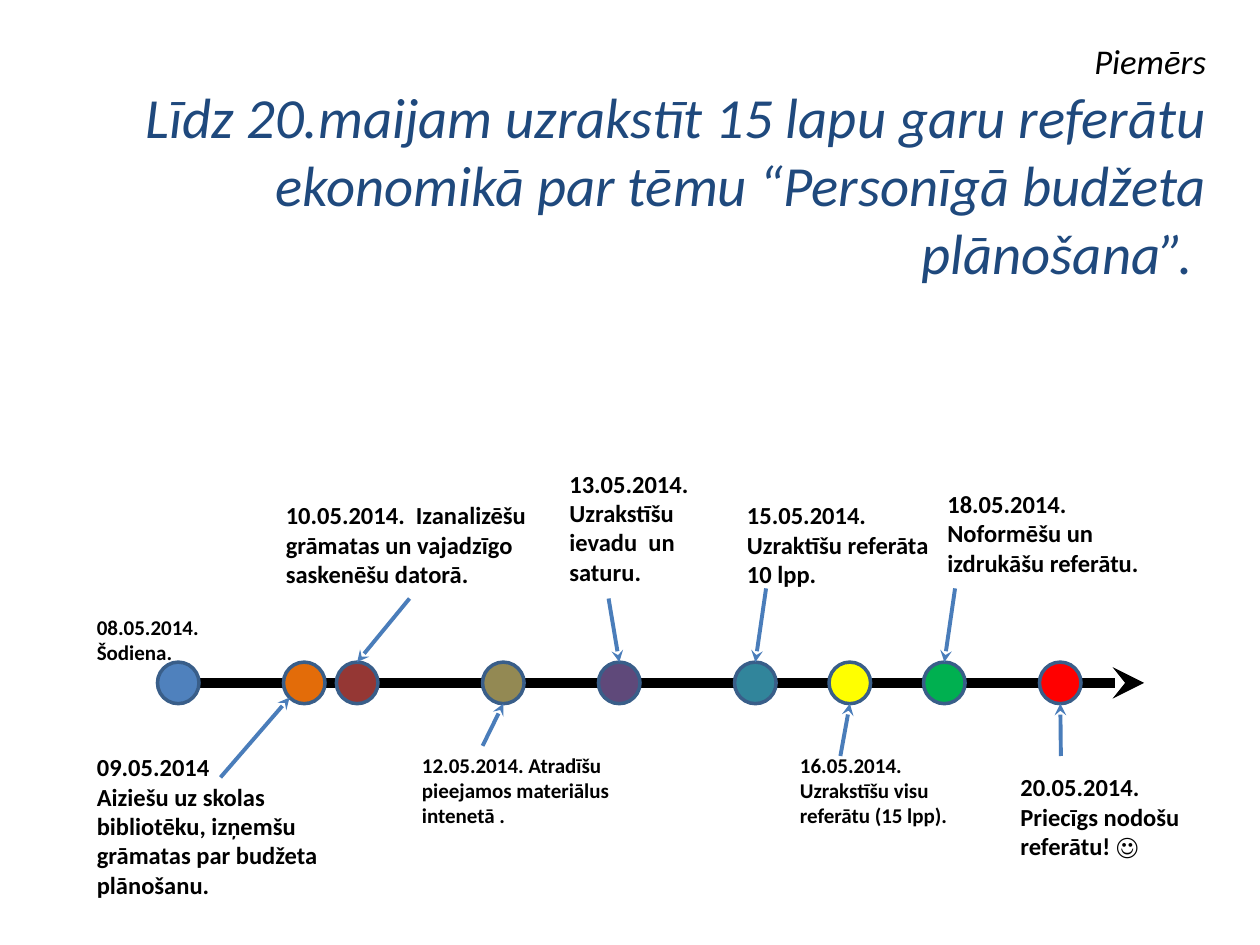
from math import cos, radians, sin

from lxml.etree import SubElement
from pptx import Presentation
from pptx.dml.color import RGBColor
from pptx.enum.shapes import MSO_CONNECTOR, MSO_SHAPE
from pptx.enum.text import MSO_ANCHOR, PP_ALIGN
from pptx.oxml.ns import qn
from pptx.util import Inches, Pt

COLORS = {
    "text": "000000", "title": "1F497D", "axis": "000000",
    "outline": "395E89", "arrow": "4A7DBA",
    "blue": "4F81BD", "orange": "E36C09", "brown": "953734",
    "olive": "938953", "purple": "5F497A", "teal": "31859B",
    "yellow": "FFFF00", "green": "00B050", "red": "FF0000",
}
FONT = "Calibri"
DIAMETER = 0.33
AXIS_Y = 5.42
AXIS_START, AXIS_END = 1.25, 9.08
UP, DOWN, DOWN_LEFT = -90, 90, 135

TITLE_BOX = (0.5, 0.92, 9.17, 1.25)
TITLE = [
    ("Piemērs", 19.8, "text"),
    ("Līdz 20.maijam uzrakstīt 15 lapu garu referātu ekonomikā "
     "par tēmu “Personīgā budžeta plānošana”. ", 32.4, "title"),
]

# (circle left, circle color, label box, size, label paragraphs, arrow start, side)
STEPS = [
    (1.25, "blue", (0.67, 4.83, 1.33, 0.5), 12,
     ["08.05.2014. Šodiena."], None, None),
    (2.25, "orange", (0.67, 5.92, 2.08, 1.28), 14,
     ["09.05.2014",
      "Aiziešu uz skolas bibliotēku, izņemšu grāmatas par budžeta plānošanu."],
     (1.75, 6.17), DOWN_LEFT),
    (2.67, "brown", (2.17, 3.92, 2.33, 0.81), 14,
     ["10.05.2014.  Izanalizēšu grāmatas un vajadzīgo saskenēšu datorā."],
     (3.25, 4.75), UP),
    (3.83, "olive", (3.25, 5.92, 2.08, 0.71), 12,
     ["12.05.2014. Atradīšu pieejamos materiālus intenetā ."],
     (3.83, 5.92), DOWN),
    (4.75, "purple", (4.42, 3.67, 1.58, 1.04), 14,
     ["13.05.2014. Uzrakstīšu ievadu  un saturu."],
     (4.83, 4.75), UP),
    (5.83, "teal", (5.83, 3.92, 1.75, 0.81), 14,
     ["15.05.2014. Uzraktīšu referāta 10 lpp."],
     (6.08, 4.67), UP),
    (6.58, "yellow", (6.25, 5.92, 1.42, 0.71), 12,
     ["16.05.2014. Uzrakstīšu visu referātu (15 lpp)."],
     (6.67, 6), DOWN),
    (7.33, "green", (7.42, 3.83, 1.75, 0.81), 14,
     ["18.05.2014. Noformēšu un izdrukāšu referātu."],
     (7.58, 4.67), UP),
    (8.25, "red", (8, 6.08, 1.5, 0.81), 14,
     ["20.05.2014. Priecīgs nodošu referātu! ☺"],
     (8.42, 6), DOWN),
]


def rgb(name):
    return RGBColor.from_string(COLORS[name])


def add_text(slide, box, lines, align=PP_ALIGN.LEFT, frame_format=None, **font_format):
    frame = slide.shapes.add_textbox(*map(Inches, box)).text_frame
    for key, value in {"word_wrap": True, **(frame_format or {})}.items():
        setattr(frame, key, value)
    for index, (words, size, color) in enumerate(lines):
        paragraph = frame.add_paragraph() if index else frame.paragraphs[0]
        paragraph.alignment = align
        run = paragraph.add_run()
        run.text = words
        run.font.color.rgb = rgb(color)
        for key, value in {"name": FONT, "size": Pt(size), **font_format}.items():
            setattr(run.font, key, value)


def add_arrow(slide, start, end, color, width):
    arrow = slide.shapes.add_connector(
        MSO_CONNECTOR.STRAIGHT, *map(Inches, (*start, *end)))
    arrow.line.color.rgb = rgb(color)
    arrow.line.width = Pt(width)
    SubElement(arrow.line._get_or_add_ln(), qn("a:tailEnd"), type="stealth")
    SubElement(arrow._element.spPr, qn("a:effectLst"))


def add_circle(slide, left, color):
    circle = slide.shapes.add_shape(
        MSO_SHAPE.OVAL, Inches(left), Inches(AXIS_Y - DIAMETER / 2),
        Inches(DIAMETER), Inches(DIAMETER))
    circle.shadow.inherit = False
    circle.fill.solid()
    circle.fill.fore_color.rgb = rgb(color)
    circle.line.color.rgb = rgb("outline")
    circle.line.width = Pt(2)


def rim_point(left, angle):
    radius = DIAMETER / 2
    return (left + radius + radius * cos(radians(angle)),
            AXIS_Y + radius * sin(radians(angle)))


def main():
    deck = Presentation()
    deck.slide_width, deck.slide_height = Inches(10), Inches(7.5)
    slide = deck.slides.add_slide(deck.slide_layouts[6])

    add_text(slide, TITLE_BOX, TITLE, PP_ALIGN.RIGHT,
             {"vertical_anchor": MSO_ANCHOR.MIDDLE, "margin_bottom": Inches(0.55)},
             italic=True)
    add_arrow(slide, (AXIS_START, AXIS_Y), (AXIS_END, AXIS_Y), "axis", 6)
    for left, color, box, size, paragraphs, start, side in STEPS:
        add_circle(slide, left, color)
        add_text(slide, box, [(words, size, "text") for words in paragraphs], bold=True)
        if start:
            add_arrow(slide, start, rim_point(left, side), "arrow", 2.25)

    deck.save("out.pptx")


if __name__ == "__main__":
    main()
